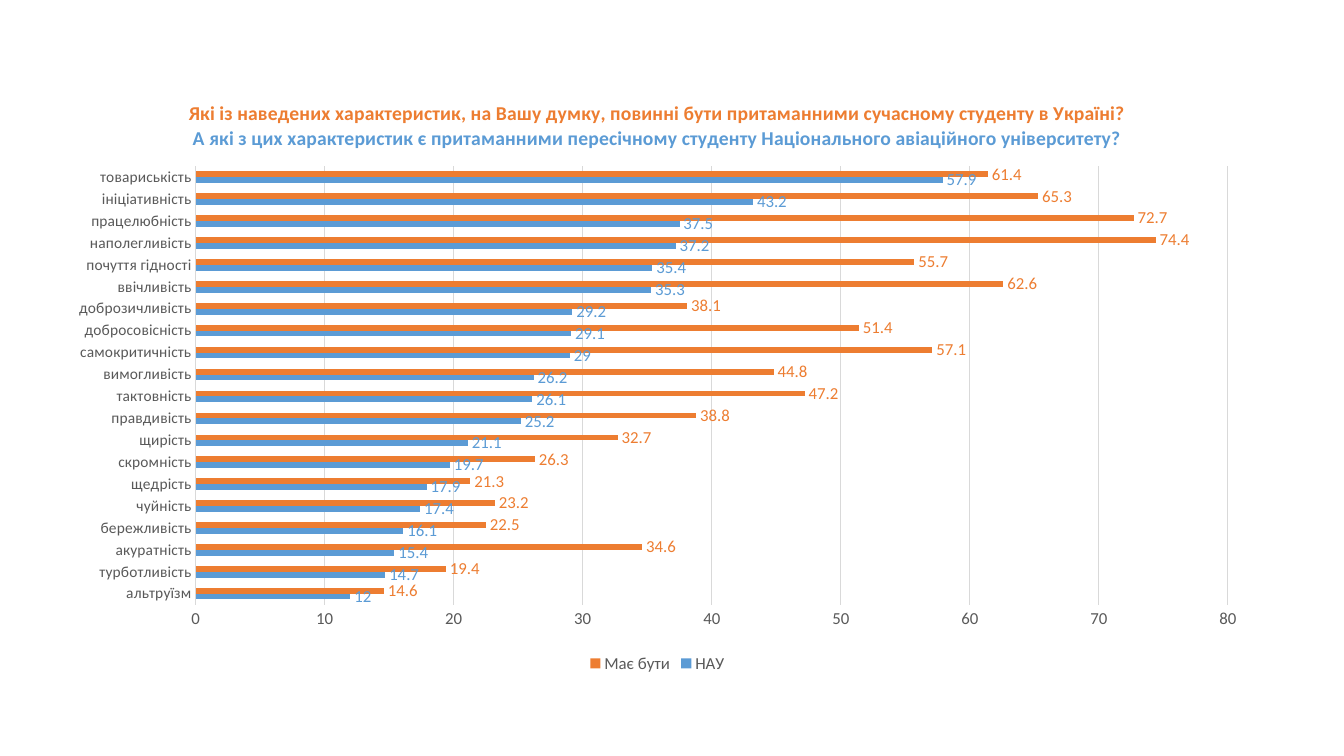
from lxml.etree import SubElement
from pptx import Presentation
from pptx.chart.data import CategoryChartData
from pptx.dml.color import RGBColor
from pptx.enum.chart import (XL_CHART_TYPE, XL_LABEL_POSITION,
                             XL_LEGEND_POSITION, XL_TICK_MARK)
from pptx.oxml.ns import qn
from pptx.util import Inches, Pt

BLUE = RGBColor(0x5B, 0x9B, 0xD5)
ORANGE = RGBColor(0xED, 0x7D, 0x31)
GRAY = RGBColor(0x59, 0x59, 0x59)
LIGHT = RGBColor(0xD9, 0xD9, 0xD9)
FACE = "Calibri"

# Content
TITLE = [
    ("Які із наведених характеристик, на Вашу думку, повинні бути "
     "притаманними сучасному студенту в Україні?", ORANGE),
    ("А які з цих характеристик є притаманними пересічному студенту "
     "Національного авіаційного університету?", BLUE),
]
SERIES = [("НАУ", BLUE), ("Має бути", ORANGE)]
ROWS = [
    ("альтруїзм", 12, 14.6),
    ("турботливість", 14.7, 19.4),
    ("акуратність", 15.4, 34.6),
    ("бережливість", 16.1, 22.5),
    ("чуйність", 17.4, 23.2),
    ("щедрість", 17.9, 21.3),
    ("скромність", 19.7, 26.3),
    ("щирість", 21.1, 32.7),
    ("правдивість", 25.2, 38.8),
    ("тактовність", 26.1, 47.2),
    ("вимогливість", 26.2, 44.8),
    ("самокритичність", 29, 57.1),
    ("добросовісність", 29.1, 51.4),
    ("доброзичливість", 29.2, 38.1),
    ("ввічливість", 35.3, 62.6),
    ("почуття гідності", 35.4, 55.7),
    ("наполегливість", 37.2, 74.4),
    ("працелюбність", 37.5, 72.7),
    ("ініціативність", 43.2, 65.3),
    ("товариськість", 57.9, 61.4),
]
# Left, top, width, height in inches
FRAME = (0.54, 0.79, 11.96, 5.93)
PLOT = (1.94, 1.65, 10.24, 4.35)


def style(font, size, color, bold=False):
    font.name = FACE
    font.size = Pt(size)
    font.bold = bold
    font.color.rgb = color


def place(area):
    """Fix the inner plot area as fractions of the chart frame."""
    left, top, wide, high = FRAME
    x, y, w, h = PLOT
    for old in area.findall(qn("c:layout")):
        area.remove(old)
    layout = SubElement(area, qn("c:layout"))
    area.insert(0, layout)
    manual = SubElement(layout, qn("c:manualLayout"))
    for tag, val in [("layoutTarget", "inner"), ("xMode", "edge"),
                     ("yMode", "edge"), ("x", (x - left) / wide),
                     ("y", (y - top) / high), ("w", w / wide),
                     ("h", h / high)]:
        SubElement(manual, qn("c:" + tag)).set("val", str(val))


# Slide
deck = Presentation()
deck.slide_width = Inches(13.33)
deck.slide_height = Inches(7.5)
slide = deck.slides.add_slide(deck.slide_layouts[6])

# Chart data
data = CategoryChartData()
names, *values = zip(*ROWS)
data.categories = names
for (name, _), vals in zip(SERIES, values):
    data.add_series(name, vals)
chart = slide.shapes.add_chart(
    XL_CHART_TYPE.BAR_CLUSTERED, *map(Inches, FRAME), data).chart
chart.font.name = FACE
chart.font.size = Pt(10)
place(chart.element.chart.plotArea)

# Title
chart.has_title = True
chart.chart_title.include_in_layout = False
frame = chart.chart_title.text_frame
for i, (text, color) in enumerate(TITLE):
    para = frame.add_paragraph() if i else frame.paragraphs[0]
    run = para.add_run()
    run.text = text
    style(run.font, 14, color, True)

# Bars and labels
plot = chart.plots[0]
plot.gap_width = 182
plot.vary_by_categories = False
for bars, (_, color) in zip(plot.series, SERIES):
    bars.invert_if_negative = False
    bars.format.fill.solid()
    bars.format.fill.fore_color.rgb = color
    labels = bars.data_labels
    labels.show_value = True
    labels.position = XL_LABEL_POSITION.OUTSIDE_END
    style(labels.font, 12, color)

# Axes
cat, val = chart.category_axis, chart.value_axis
for axis, size in [(cat, 11), (val, 12)]:
    axis.major_tick_mark = axis.minor_tick_mark = XL_TICK_MARK.NONE
    style(axis.tick_labels.font, size, GRAY)
val.minimum_scale, val.maximum_scale, val.major_unit = 0, 80, 10
val.format.line.fill.background()
val.has_major_gridlines = True
for line in (cat.format.line, val.major_gridlines.format.line):
    line.color.rgb = LIGHT
    line.width = Pt(0.75)

# Legend
chart.has_legend = True
chart.legend.position = XL_LEGEND_POSITION.BOTTOM
chart.legend.include_in_layout = False
style(chart.legend.font, 12, GRAY)

deck.save("out.pptx")
